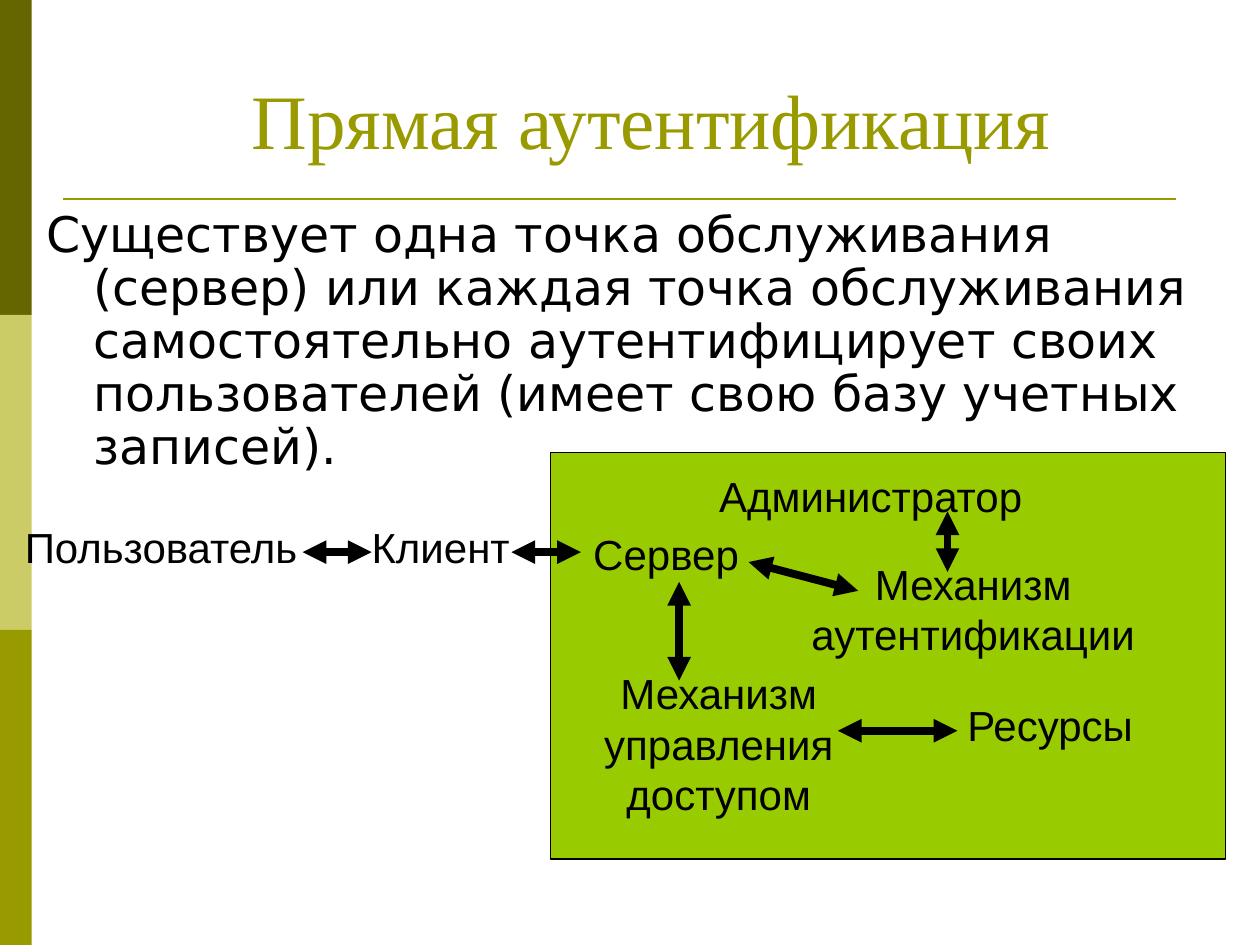
from dataclasses import dataclass

import lxml.etree
import pptx
import pptx.dml.color
import pptx.enum.shapes
import pptx.enum.text
import pptx.oxml.ns
import pptx.util
from pptx.util import Cm

ALIGN = pptx.enum.text.PP_ALIGN
ANCHOR = pptx.enum.text.MSO_ANCHOR


@dataclass(frozen=True)
class Theme:
    dark_olive: str = "666600"
    pale_olive: str = "CCCC66"
    olive: str = "999900"
    panel: str = "99CC00"
    ink: str = "000000"
    title_font: str = "Times New Roman"
    body_font: str = "DejaVu Sans"
    label_font: str = "Arial"
    title_size: int = 44
    body_size: int = 28
    label_size: int = 24


def rgb(color):
    return pptx.dml.color.RGBColor.from_string(color)


class SlideBuilder:
    def __init__(self, slide, theme):
        self.shapes = slide.shapes
        self.theme = theme

    def rectangle(self, left, top, width, height, fill, outline=None):
        kind = pptx.enum.shapes.MSO_SHAPE.RECTANGLE
        box = self.shapes.add_shape(kind, Cm(left), Cm(top), Cm(width), Cm(height))
        box.shadow.inherit = False
        box.fill.solid()
        box.fill.fore_color.rgb = rgb(fill)
        if outline:
            box.line.color.rgb = rgb(outline)
            box.line.width = pptx.util.Pt(0.75)
        else:
            box.line.fill.background()

    def text(self, left, top, width, height, words, font, size, color,
             align=ALIGN.LEFT, anchor=ANCHOR.TOP, wrap=True):
        box = self.shapes.add_textbox(Cm(left), Cm(top), Cm(width), Cm(height))
        frame = box.text_frame
        frame.word_wrap = wrap
        frame.vertical_anchor = anchor
        frame.text = words
        for paragraph in frame.paragraphs:
            paragraph.alignment = align
            for run in paragraph.runs:
                run.font.name = font
                run.font.size = pptx.util.Pt(size)
                run.font.color.rgb = rgb(color)
        return frame

    def title(self, left, top, width, height, words):
        style = self.theme
        self.text(left, top, width, height, words, style.title_font,
                  style.title_size, style.olive, ALIGN.CENTER, ANCHOR.BOTTOM)

    def body(self, left, top, width, height, words):
        """Add a paragraph with a hanging indent."""
        style = self.theme
        frame = self.text(left, top, width, height, words,
                          style.body_font, style.body_size, style.ink)
        paragraph = frame.paragraphs[0]
        paragraph.line_spacing = 0.9
        properties = paragraph._p.get_or_add_pPr()
        properties.set("marL", str(int(Cm(0.95))))
        properties.set("indent", str(int(Cm(-0.95))))

    def label(self, left, top, width, words):
        """Add a diagram label; labels of several lines are centred."""
        style = self.theme
        lines = words.count("\n") + 1
        align = ALIGN.CENTER if lines > 1 else ALIGN.LEFT
        self.text(left, top, width, 0.25 + 1.02 * lines, words, style.label_font,
                  style.label_size, style.ink, align, wrap=False)

    def line(self, x1, y1, x2, y2, color, width):
        kind = pptx.enum.shapes.MSO_CONNECTOR.STRAIGHT
        line = self.shapes.add_connector(kind, Cm(x1), Cm(y1), Cm(x2), Cm(y2))
        line.line.color.rgb = rgb(color)
        line.line.width = pptx.util.Pt(width)
        lxml.etree.SubElement(line._element.spPr, pptx.oxml.ns.qn("a:effectLst"))
        return line

    def double_arrow(self, x1, y1, x2, y2):
        arrow = self.line(x1, y1, x2, y2, self.theme.ink, 4.5)
        outline = arrow._element.spPr.find(pptx.oxml.ns.qn("a:ln"))
        for end in ("a:headEnd", "a:tailEnd"):
            lxml.etree.SubElement(outline, pptx.oxml.ns.qn(end), type="triangle")


def main():
    deck = pptx.Presentation()
    deck.slide_width, deck.slide_height = Cm(25.4), Cm(19.05)
    theme = Theme()
    builder = SlideBuilder(deck.slides.add_slide(deck.slide_layouts[6]), theme)

    band_height = 6.35
    for index, color in enumerate((theme.dark_olive, theme.pale_olive, theme.olive)):
        builder.rectangle(0, index * band_height, 0.64, band_height, color)
    builder.line(1.27, 4.01, 23.7, 4.01, theme.olive, 1.5)

    builder.title(1.7, 0.53, 22.86, 2.92, "Прямая аутентификация")
    builder.body(
        0.69, 4.11, 24.71, 4.39,
        "Существует одна точка обслуживания (сервер) или каждая точка "
        "обслуживания самостоятельно аутентифицирует своих пользователей "
        "(имеет свою базу учетных записей).")

    builder.rectangle(11.1, 9.12, 13.61, 8.2, theme.panel, theme.ink)
    labels = [
        (0.25, 10.39, 6.1, "Пользователь"),
        (7.24, 10.39, 3.3, "Клиент"),
        (14.25, 9.37, 6.65, "Администратор"),
        (11.71, 10.52, 3.45, "Сервер"),
        (16.1, 11.13, 7.04, "Механизм\nаутентификации"),
        (11.91, 13.34, 5.16, "Механизм\nуправления\nдоступом"),
        (19.25, 13.97, 3.89, "Ресурсы"),
    ]
    for label in labels:
        builder.label(*label)

    links = [
        (6.1, 11.13, 7.49, 11.13),      # user - client
        (10.31, 11.13, 11.71, 11.13),   # client - server
        (19.1, 10.31, 19.1, 11.53),     # administrator - authentication
        (15.09, 11.33, 17.3, 11.91),    # server - authentication
        (13.69, 11.73, 13.69, 13.72),   # server - access control
        (16.89, 14.73, 19.3, 14.73),    # access control - resources
    ]
    for link in links:
        builder.double_arrow(*link)

    deck.save("out.pptx")


if __name__ == "__main__":
    main()
